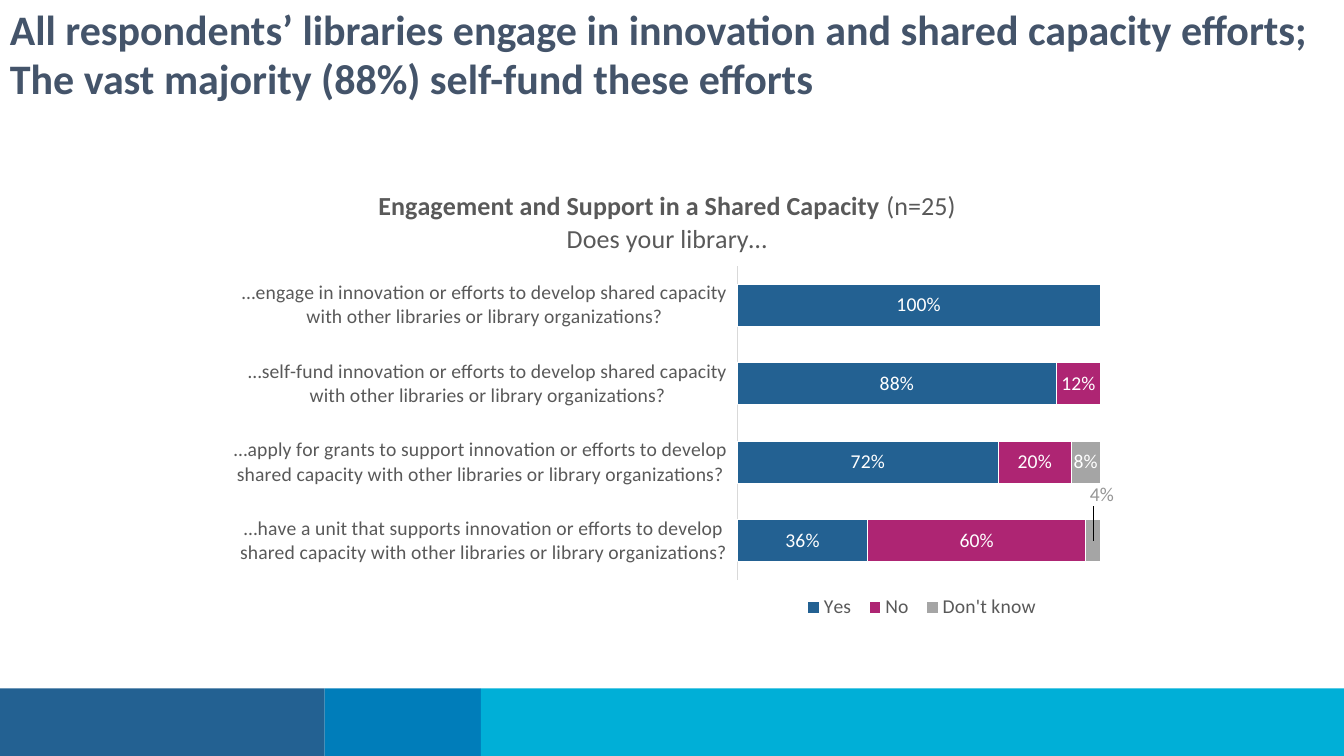
from pptx import Presentation
from pptx.chart.data import CategoryChartData
from pptx.dml.color import RGBColor
from pptx.enum.chart import XL_CHART_TYPE as ChartType, XL_LEGEND_POSITION as LegendPosition
from pptx.enum.chart import XL_TICK_LABEL_POSITION as LabelPosition, XL_TICK_MARK as TickMark
from pptx.enum.shapes import MSO_SHAPE as Shape
from pptx.enum.text import MSO_ANCHOR as Anchor
from pptx.oxml import parse_xml
from pptx.oxml.ns import nsdecls
from pptx.util import Inches, Pt

FONT = "Calibri"
COLORS = {
    "navy": "236192", "blue": "007DBA", "cyan": "00AFD7", "heading": "44546A",
    "magenta": "AE2573", "gray": "A5A5A5", "text": "595959", "outside": "959595",
    "axis": "D9D9D9", "white": "FFFFFF",
}
HEADING = [
    "All respondents’ libraries engage in innovation and shared capacity efforts;",
    "The vast majority (88%) self-fund these efforts",
]
CHART_TITLE = [
    [("Engagement and Support in a Shared Capacity", True), (" (n=25)", False)],
    [("Does your library…", False)],
]
QUESTIONS = [
    "…have a unit that supports innovation or efforts to develop shared capacity with other libraries or library organizations?",
    "…apply for grants to support innovation or efforts to develop shared capacity with other libraries or library organizations?",
    "…self-fund innovation or efforts to develop shared capacity with other libraries or library organizations?",
    "…engage in innovation or efforts to develop shared capacity with other libraries or library organizations?",
]
ANSWERS = [
    ("Yes", [0.36, 0.72, 0.88, 1], "navy"),
    ("No", [0.6, 0.2, 0.12, 0], "magenta"),
    ("Don't know", [0.04, 0.08, 0, 0], "gray"),
]


def rgb(name):
    return RGBColor.from_string(COLORS[name])


def style_font(font, size, color, bold=False):
    font.name = FONT
    font.size = Pt(size)
    font.bold = bold
    font.color.rgb = rgb(color)


def manual_layout(inner=False, edge=True, **shares):
    target = '<c:layoutTarget val="inner"/>' if inner else ""
    modes = '<c:xMode val="edge"/><c:yMode val="edge"/>' if edge else ""
    values = "".join(f'<c:{key} val="{value}"/>' for key, value in shares.items())
    return parse_xml(
        f'<c:layout {nsdecls("c")}><c:manualLayout>{target}{modes}{values}</c:manualLayout></c:layout>'
    )


def place(element, layout, successors):
    for old in element.findall(layout.tag):
        element.remove(old)
    element.insert_element_before(layout, *successors)


def add_footer(slide, left, top, width, height):
    for share, color in ((0.2415, "navy"), (0.1163, "blue"), (0.6422, "cyan")):
        band_width = int(width * share)
        band = slide.shapes.add_shape(Shape.RECTANGLE, left, top, band_width, height)
        band.shadow.inherit = False
        band.fill.solid()
        band.fill.fore_color.rgb = rgb(color)
        band.line.fill.background()
        left += band_width


def add_heading(slide, left, top, width, height):
    frame = slide.shapes.add_textbox(left, top, width, height).text_frame
    frame.word_wrap = True
    frame.vertical_anchor = Anchor.TOP
    for index, line in enumerate(HEADING):
        paragraph = frame.add_paragraph() if index else frame.paragraphs[0]
        paragraph.line_spacing = 0.7
        paragraph.space_before = Pt(10 if index else 0)
        run = paragraph.add_run()
        run.text = line
        style_font(run.font, 30, "heading", True)


def add_chart_title(chart):
    frame = chart.chart_title.text_frame
    for index, pieces in enumerate(CHART_TITLE):
        paragraph = frame.add_paragraph() if index else frame.paragraphs[0]
        for text, bold in pieces:
            run = paragraph.add_run()
            run.text = text
            style_font(run.font, 18.6, "text", bold)
    chart.chart_title.include_in_layout = False
    title = chart.chart_title.format.fill and chart.chart_title._element
    place(title, manual_layout(x=0.17, y=0.04), ("c:overlay", "c:spPr", "c:txPr"))


def style_series(series, values, color):
    series.format.fill.solid()
    series.format.fill.fore_color.rgb = rgb(color)
    series.format.line.color.rgb = rgb("white")
    series.format.line.width = Pt(0.75)
    labels = series.data_labels
    labels.show_value = True
    labels.number_format = "0%"
    labels.number_format_is_linked = False
    style_font(labels.font, 14, "white")
    empty = [index for index, value in enumerate(values) if value == 0]
    for index in reversed(empty):
        labels._element.insert(0, parse_xml(
            f'<c:dLbl {nsdecls("c")}><c:idx val="{index}"/><c:delete val="1"/></c:dLbl>'
        ))
    for index, value in enumerate(values):
        if 0 < value < 0.05:
            style_font(series.points[index].data_label.font, 14, "outside")
            label = labels._element.dLbl_lst[0]
            label.insert(1, manual_layout(edge=False, x=0.01, y=-0.1))


def add_engagement_chart(slide, left, top, width, height):
    data = CategoryChartData(number_format="0%")
    data.categories = QUESTIONS
    for name, values, color in ANSWERS:
        data.add_series(name, values)
    chart = slide.shapes.add_chart(
        ChartType.BAR_STACKED_100, left, top, width, height, data
    ).chart
    style_font(chart.font, 14, "text")
    add_chart_title(chart)

    plot = chart.plots[0]
    plot.vary_by_categories = False
    plot.gap_width = 87
    plot.overlap = 100
    for series, (name, values, color) in zip(plot.series, ANSWERS):
        style_series(series, values, color)

    chart.value_axis.visible = False
    chart.value_axis.has_major_gridlines = False
    chart.value_axis.maximum_scale = 1
    axis = chart.category_axis
    axis.major_tick_mark = axis.minor_tick_mark = TickMark.NONE
    axis.tick_label_position = LabelPosition.LOW
    axis.format.line.color.rgb = rgb("axis")
    axis.format.line.width = Pt(0.75)
    style_font(axis.tick_labels.font, 14, "text")

    chart.has_legend = True
    chart.legend.position = LegendPosition.BOTTOM
    chart.legend.include_in_layout = False
    style_font(chart.legend.font, 14, "text")
    place(chart.legend._element, manual_layout(x=0.64, y=0.92, w=0.28, h=0.07),
          ("c:overlay", "c:spPr", "c:txPr"))
    area = chart._chartSpace.chart.plotArea
    for old in area.findall(manual_layout().tag):
        area.remove(old)
    area.insert(0, manual_layout(inner=True, x=0.574, y=0.214, w=0.405, h=0.682))


def main():
    presentation = Presentation()
    presentation.slide_width = width = Inches(13.33)
    presentation.slide_height = height = Inches(7.5)
    slide = presentation.slides.add_slide(presentation.slide_layouts[6])
    footer_top = Inches(6.83)
    add_footer(slide, 0, footer_top, width, height - footer_top)
    add_heading(slide, 0, Inches(0.12), Inches(13.13), Inches(1.42))
    add_engagement_chart(slide, Inches(2.21), Inches(1.66), Inches(8.89), Inches(4.57))
    presentation.save("out.pptx")


if __name__ == "__main__":
    main()
